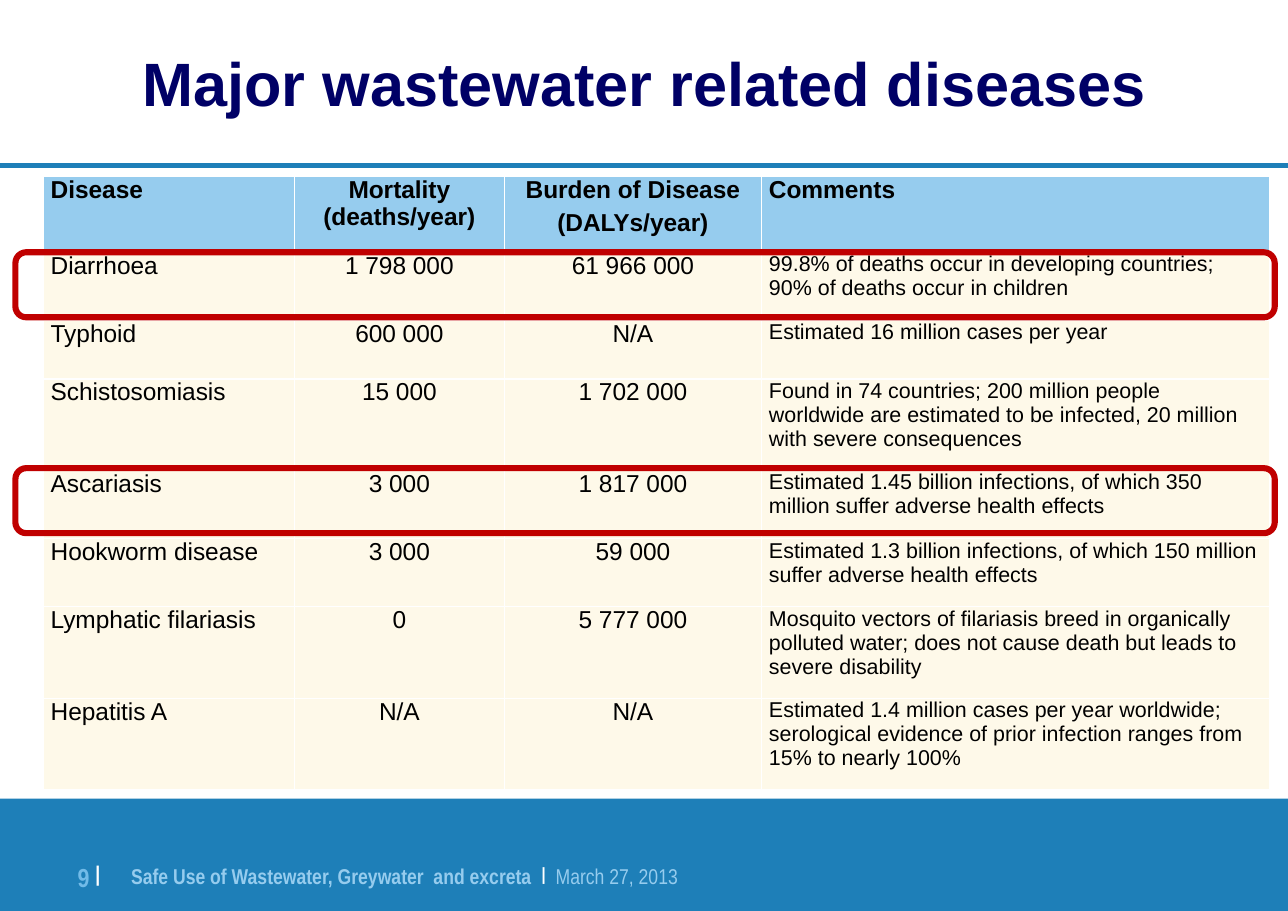
from lxml import etree
from pptx import Presentation
from pptx.dml.color import RGBColor
from pptx.enum.shapes import MSO_CONNECTOR, MSO_SHAPE
from pptx.enum.text import MSO_ANCHOR, PP_ALIGN
from pptx.oxml.ns import qn
from pptx.util import Inches, Pt

LEFT, CENTER, RIGHT = PP_ALIGN.LEFT, PP_ALIGN.CENTER, PP_ALIGN.RIGHT
TOP, MIDDLE = MSO_ANCHOR.TOP, MSO_ANCHOR.MIDDLE
STRAIGHT = MSO_CONNECTOR.STRAIGHT
RECTANGLE, ROUNDED = MSO_SHAPE.RECTANGLE, MSO_SHAPE.ROUNDED_RECTANGLE

BLUE = RGBColor(0x1E, 0x7F, 0xB8)
PALE_BLUE = RGBColor(0x96, 0xCC, 0xEE)
NUMBER_BLUE = RGBColor(0x72, 0xBB, 0xE8)
NAVY = RGBColor(0x00, 0x00, 0x66)
CREAM = RGBColor(0xFE, 0xF9, 0xE9)
RED = RGBColor(0xC0, 0x00, 0x00)
WHITE = RGBColor(0xFF, 0xFF, 0xFF)
BLACK = RGBColor(0x00, 0x00, 0x00)
SANS, NARROW = "Arial", "Arial Narrow"

WIDTH, HEIGHT = 11.69, 8.27
TITLE = "Major wastewater related diseases"
DISEASES = [
    ("Disease", "Mortality (deaths/year)", "Burden of Disease\n(DALYs/year)", "Comments"),
    ("Diarrhoea", "1 798 000", "61 966 000",
     "99.8% of deaths occur in developing countries; 90% of deaths occur in children"),
    ("Typhoid", "600 000", "N/A", "Estimated 16 million cases per year"),
    ("Schistosomiasis", "15 000", "1 702 000",
     "Found in 74 countries; 200 million people worldwide are estimated to be infected, "
     "20 million with severe consequences"),
    ("Ascariasis", "3 000", "1 817 000",
     "Estimated 1.45 billion infections, of which 350 million suffer adverse health effects"),
    ("Hookworm disease", "3 000", "59 000",
     "Estimated 1.3 billion infections, of which 150 million suffer adverse health effects"),
    ("Lymphatic filariasis", "0", "5 777 000",
     "Mosquito vectors of filariasis breed in organically polluted water; "
     "does not cause death but leads to severe disability"),
    ("Hepatitis A", "N/A", "N/A",
     "Estimated 1.4 million cases per year worldwide; "
     "serological evidence of prior infection ranges from 15% to nearly 100%"),
]
COLUMN_WIDTHS = [2.28, 1.91, 2.33, 4.61]
ROW_HEIGHTS = [0.69, 0.62, 0.53, 0.83, 0.62, 0.62, 0.83, 0.83]
COLUMN_ALIGNS = [LEFT, CENTER, CENTER, LEFT]
TABLE_LEFT, TABLE_TOP = 0.39, 1.6
HIGHLIGHT_TOPS = [2.29, 4.25]

FOOTERS = [
    ((1.19, 7.75, 5.43, 0.52), LEFT, [
        ("Safe Use of Wastewater, Greywater  and excreta  ", 14, PALE_BLUE, True, 0),
        ("|", 20, WHITE, True, 12),
        ("  ", 14, PALE_BLUE, True, 0),
        ("March 27, 2013", 14, PALE_BLUE, False, 0)]),
    ((0.46, 7.72, 0.45, 0.4), RIGHT, [
        ("9 ", 17, NUMBER_BLUE, True, 0),
        ("|", 24, WHITE, True, 14)]),
]


def add_span(para, text, size, color, bold, face):
    """Append one formatted run and return it."""
    span = para.add_run()
    span.text = text
    span.font.size = Pt(size)
    span.font.color.rgb = color
    span.font.bold = bold
    span.font.name = face
    return span


def clear_margins(frame):
    """Remove the inner margins of a text frame."""
    frame.margin_left = frame.margin_right = frame.margin_top = frame.margin_bottom = 0


def add_title(page):
    """Fill the title placeholder and give its text a pale shadow."""
    title = page.shapes.title
    title.left = title.top = 0
    title.width, title.height = Inches(WIDTH), Inches(1.49)
    frame = title.text_frame
    clear_margins(frame)
    frame.vertical_anchor = MIDDLE
    frame.word_wrap = True
    para = frame.paragraphs[0]
    para.alignment = CENTER
    span = add_span(para, TITLE, 40, NAVY, True, SANS)
    effects = etree.Element(qn("a:effectLst"))
    shadow = etree.SubElement(effects, qn("a:outerShdw"), dist="38100", dir="2700000")
    etree.SubElement(shadow, qn("a:srgbClr"), val=str(PALE_BLUE))
    span.font._element.find(qn("a:solidFill")).addnext(effects)


def add_frame(page):
    """Draw the rule under the title and the footer band with its texts."""
    rule = page.shapes.add_connector(STRAIGHT, 0, Inches(1.5), Inches(WIDTH), Inches(1.5))
    rule.line.color.rgb = BLUE
    rule.line.width = Pt(3)
    etree.SubElement(rule._element.spPr, qn("a:effectLst"))
    band = page.shapes.add_shape(RECTANGLE, 0, Inches(7.25), Inches(WIDTH), Inches(1.02))
    band.shadow.inherit = False
    band.fill.solid()
    band.fill.fore_color.rgb = BLUE
    band.line.fill.background()
    for place, align, spans in FOOTERS:
        frame = page.shapes.add_textbox(*map(Inches, place)).text_frame
        clear_margins(frame)
        frame.word_wrap = True
        para = frame.paragraphs[0]
        para.alignment = align
        for text, size, color, bold, lift in spans:
            span = add_span(para, text, size, color, bold, NARROW)
            if lift:
                span.font._element.set("baseline", str(lift * 1000))


def style_cell(cell, fill):
    """Set margins, white borders and fill of a cell."""
    cell.margin_left = cell.margin_right = Inches(0.07)
    cell.margin_top = cell.margin_bottom = 0
    cell.vertical_anchor = TOP
    properties = cell._tc.get_or_add_tcPr()
    for side in ("lnL", "lnR", "lnT", "lnB"):
        border = etree.SubElement(properties, qn(f"a:{side}"), w=str(Pt(1)))
        paint = etree.SubElement(border, qn("a:solidFill"))
        etree.SubElement(paint, qn("a:srgbClr"), val=str(WHITE))
    cell.fill.solid()
    cell.fill.fore_color.rgb = fill


def add_disease_table(page):
    """Build the table of diseases."""
    table = page.shapes.add_table(
        len(DISEASES), len(COLUMN_WIDTHS), Inches(TABLE_LEFT), Inches(TABLE_TOP),
        Inches(sum(COLUMN_WIDTHS)), Inches(sum(ROW_HEIGHTS))).table
    table.horz_banding = False
    for column, width in zip(table.columns, COLUMN_WIDTHS):
        column.width = Inches(width)
    for row, height in zip(table.rows, ROW_HEIGHTS):
        row.height = Inches(height)
    for row_index, texts in enumerate(DISEASES):
        header = row_index == 0
        for column_index, text in enumerate(texts):
            cell = table.cell(row_index, column_index)
            style_cell(cell, PALE_BLUE if header else CREAM)
            size = 14 if column_index == 3 and not header else 16
            for line_index, line in enumerate(text.split("\n")):
                frame = cell.text_frame
                para = frame.add_paragraph() if line_index else frame.paragraphs[0]
                para.alignment = COLUMN_ALIGNS[column_index]
                para.space_before = Pt(2 if line_index else 0)
                para.space_after = Pt(2)
                add_span(para, line, size, BLACK, header, SANS)


def add_highlights(page):
    """Outline the highlighted rows in red."""
    for top in HIGHLIGHT_TOPS:
        outline = page.shapes.add_shape(
            ROUNDED, Inches(0.14), Inches(top), Inches(11.43), Inches(0.59))
        outline.shadow.inherit = False
        outline.fill.background()
        outline.line.color.rgb = RED
        outline.line.width = Pt(4)


def main():
    """Build and save the slide."""
    deck = Presentation()
    deck.slide_width, deck.slide_height = Inches(WIDTH), Inches(HEIGHT)
    page = deck.slides.add_slide(deck.slide_layouts[5])
    add_title(page)
    add_frame(page)
    add_disease_table(page)
    add_highlights(page)
    deck.save("out.pptx")


if __name__ == "__main__":
    main()
